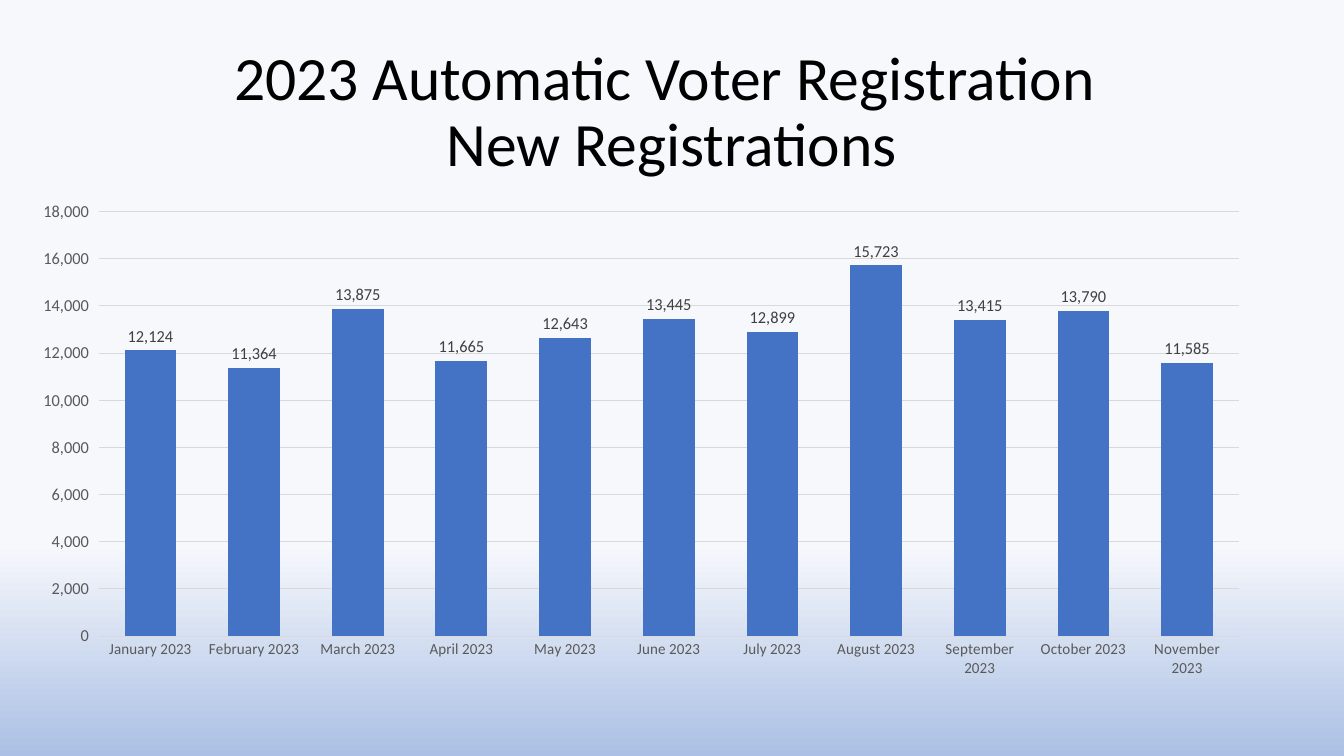
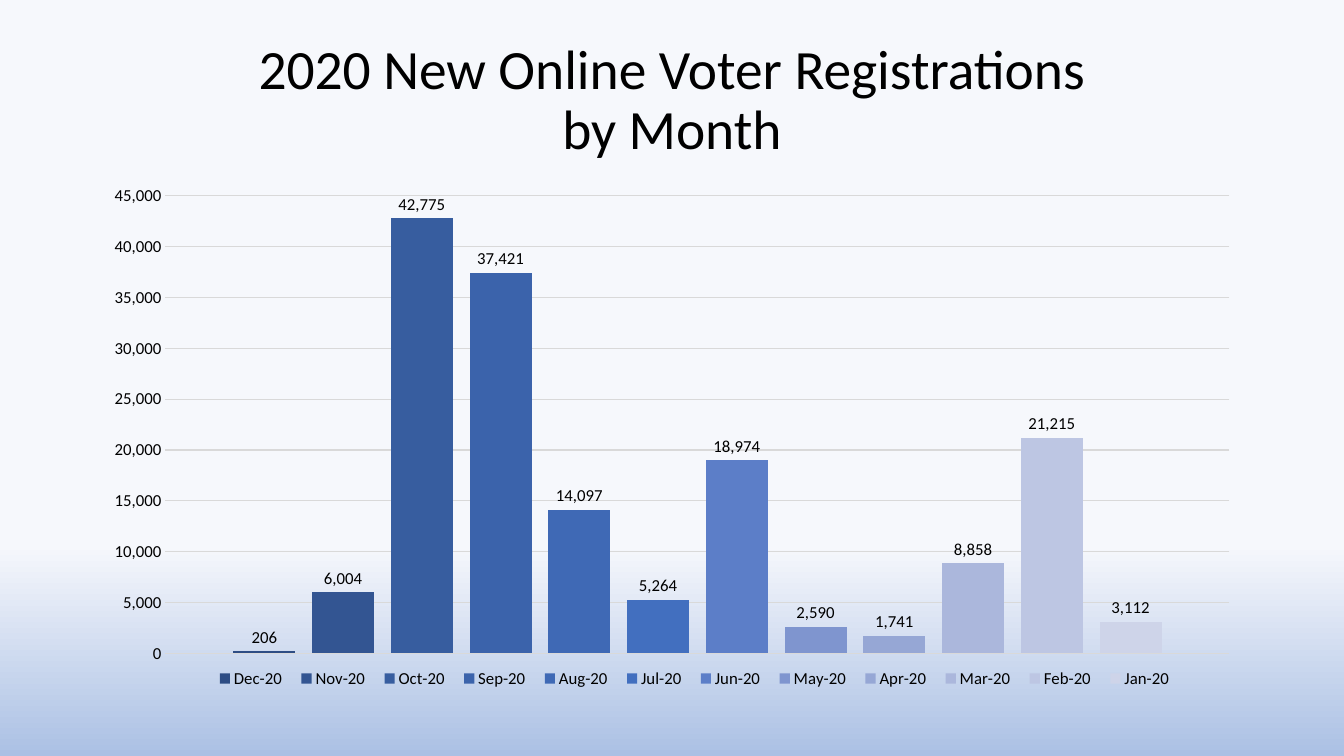
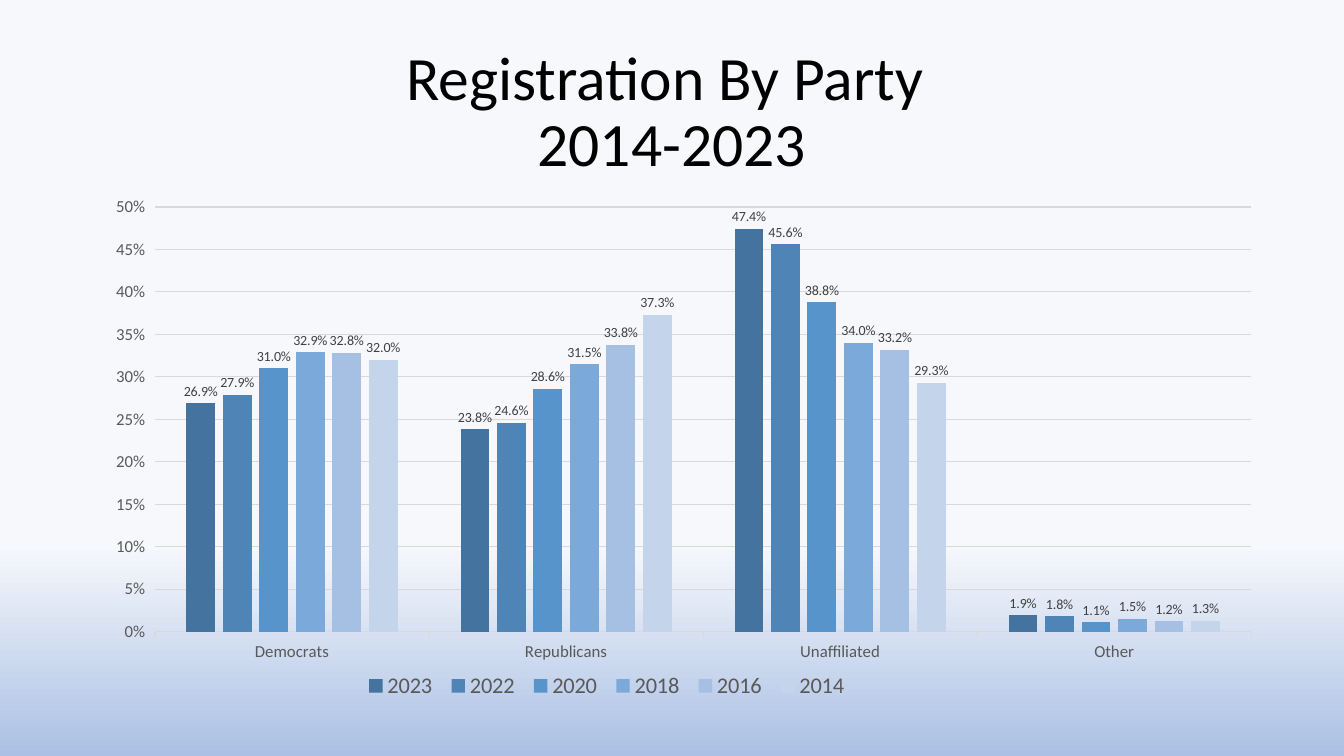
from lxml import etree
from pptx import Presentation
from pptx.chart import data as cd
from pptx.dml.color import RGBColor
from pptx.enum import chart as ce, text as te
from pptx.util import Pt

FONT = "Calibri"
BLACK, GREY, DARK, RULE = "000000", "595959", "404040", "D9D9D9"
SKY, BASE = "F6F8FC", "ABC0E4"
LEFT, TOP, WIDE = 66, 28.8, 828

# Content: series are (name, colour, values)
DECK = [
    dict(
        title=["2023 Automatic Voter Registration ", "New Registrations"],
        size=44, high=104.4, box=(31, 144, 898.6, 342.3),
        cats=[m + " 2023" for m in (
            "November", "October", "September", "August", "July", "June",
            "May", "April", "March", "February", "January")],
        series=[("Series 1", "4472C4", [
            11585, 13790, 13415, 15723, 12899, 13445,
            12643, 11665, 13875, 11364, 12124])],
        form="#,##0", label=(12, DARK), axis=(12, GREY), cat=11,
        scale=(18000, 2000), gap=100, turn=True,
        plot=(0.018, 0.021, 0.931, 0.886)),
    dict(
        title=["2020 New Online Voter Registrations", "by Month"],
        size=39.6, high=87.1, box=(LEFT, 115.6, WIDE, 385.9),
        cats=["1"],
        series=[(m + "-20", c, [v]) for m, c, v in (
            ("Dec", "2E4D84", 206), ("Nov", "335592", 6004),
            ("Oct", "375D9F", 42775), ("Sep", "3B63AB", 37421),
            ("Aug", "3F69B5", 14097), ("Jul", "426FBF", 5264),
            ("Jun", "5C7EC8", 18974), ("May", "7F95CF", 2590),
            ("Apr", "96A7D5", 1741), ("Mar", "ABB7DC", 8858),
            ("Feb", "BDC6E3", 21215), ("Jan", "CED4E9", 3112))],
        form="#,##0", label=(12, BLACK), axis=(12, BLACK),
        scale=(45000, 5000), gap=219, legend=(12, BLACK),
        key=(0.098, 0.929, 0.843, 0.055),
        plot=(0.063, 0.063, 0.918, 0.847)),
    dict(
        title=["Registration By Party ", "2014-2023"],
        size=44, high=104.4, box=(LEFT, 133.2, 844.6, 378),
        cats=["Democrats", "Republicans", "Unaffiliated", "Other"],
        series=[
            ("2023", "43739E", [0.269, 0.238, 0.474, 0.019]),
            ("2022", "4E85B6", [0.279, 0.246, 0.456, 0.018]),
            ("2020", "5794CB", [0.31, 0.286, 0.388, 0.011]),
            ("2018", "7AA9DA", [0.329, 0.315, 0.34, 0.015]),
            ("2016", "A5C0E3", [0.328, 0.338, 0.332, 0.012]),
            ("2014", "C4D5EB", [0.32, 0.373, 0.293, 0.013])],
        form="0.0%", tick="0%", label=(10, DARK), axis=(12, GREY), cat=12,
        scale=(0.5, 0.05), gap=219, legend=(16, GREY), marks=True,
        key=(0.224, 0.91, 0.422, 0.068)),
]


def rgb(code):
    return RGBColor.from_string(code)


def style(font, size, color):
    font.name, font.size, font.bold = FONT, Pt(size), False
    font.color.rgb = rgb(color)


def rule(line):
    line.color.rgb, line.width = rgb(RULE), Pt(0.75)


def place(shape, *box):
    shape.left, shape.top, shape.width, shape.height = map(Pt, box)


def set_back(master):
    fill = master.background.fill
    fill.gradient()
    fill.gradient_angle = 270
    for stop, pos, color in zip(fill.gradient_stops, (0.72, 1), (SKY, BASE)):
        stop.position, stop.color.rgb = pos, rgb(color)


def add_title(slide, page):
    title = slide.shapes.title
    place(title, LEFT, TOP, WIDE, page["high"])
    frame = title.text_frame
    frame.auto_size = te.MSO_AUTO_SIZE.NONE
    frame.vertical_anchor = te.MSO_ANCHOR.MIDDLE
    para = frame.paragraphs[0]
    para.alignment, para.line_spacing = te.PP_ALIGN.CENTER, 0.9
    for i, words in enumerate(page["title"]):
        if i:
            para.add_line_break()
        run = para.add_run()
        run.text = words
        style(run.font, page["size"], BLACK)


def set_layout(part, index, box, inner=False):
    """Fix a chart part at fractions of the chart."""
    ns = etree.QName(part).namespace
    for old in part.findall(f"{{{ns}}}layout"):
        part.remove(old)
    layout = etree.Element(f"{{{ns}}}layout")
    manual = etree.SubElement(layout, f"{{{ns}}}manualLayout")
    marks = [("layoutTarget", "inner")] if inner else []
    marks += [("xMode", "edge"), ("yMode", "edge"), *zip("xywh", box)]
    for tag, val in marks:
        etree.SubElement(manual, f"{{{ns}}}{tag}").set("val", str(val))
    part.insert(index, layout)


def set_axes(chart, page):
    val, cat = chart.value_axis, chart.category_axis
    marks = ce.XL_TICK_MARK.OUTSIDE if page.get("marks") else ce.XL_TICK_MARK.NONE
    for axis in (val, cat):
        axis.major_tick_mark = marks
        axis.minor_tick_mark = ce.XL_TICK_MARK.NONE
    val.minimum_scale = 0
    val.maximum_scale, val.major_unit = page["scale"]
    val.has_major_gridlines = True
    rule(val.major_gridlines.format.line)
    val.format.line.fill.background()
    ticks = val.tick_labels
    ticks.number_format = page.get("tick", page["form"])
    ticks.number_format_is_linked = False
    style(ticks.font, *page["axis"])
    if "cat" in page:
        style(cat.tick_labels.font, page["cat"], GREY)
        rule(cat.format.line)
    else:
        cat.visible = False
    if page.get("turn"):
        cat.reverse_order = True
        val.tick_label_position = ce.XL_TICK_LABEL_POSITION.HIGH


def add_chart(slide, page):
    data = cd.CategoryChartData(number_format=page["form"])
    data.categories = page["cats"]
    for name, _, vals in page["series"]:
        data.add_series(name, vals)
    chart = slide.shapes.add_chart(
        ce.XL_CHART_TYPE.COLUMN_CLUSTERED, *map(Pt, page["box"]), data).chart
    chart.has_title = False
    style(chart.font, 10, BLACK)
    bars = chart.plots[0]
    bars.gap_width, bars.overlap = page["gap"], -27
    bars.vary_by_categories = False
    for bar, (_, color, _) in zip(bars.series, page["series"]):
        bar.format.fill.solid()
        bar.format.fill.fore_color.rgb = rgb(color)
        bar.invert_if_negative = False
        tag = bar.data_labels
        tag.show_value = True
        tag.position = ce.XL_LABEL_POSITION.OUTSIDE_END
        tag.number_format, tag.number_format_is_linked = page["form"], False
        style(tag.font, *page["label"])
    set_axes(chart, page)
    chart.has_legend = "legend" in page
    if chart.has_legend:
        key = chart.legend
        key.position = ce.XL_LEGEND_POSITION.BOTTOM
        key.include_in_layout = False
        style(key.font, *page["legend"])
        set_layout(key._element, 1, page["key"])
    if "plot" in page:
        set_layout(bars._element.getparent(), 0, page["plot"], inner=True)


def main():
    prs = Presentation()
    prs.slide_width, prs.slide_height = Pt(960), Pt(540)
    set_back(prs.slide_master)
    for page in DECK:
        slide = prs.slides.add_slide(prs.slide_layouts[5])
        add_title(slide, page)
        add_chart(slide, page)
    prs.save("out.pptx")


if __name__ == "__main__":
    main()
